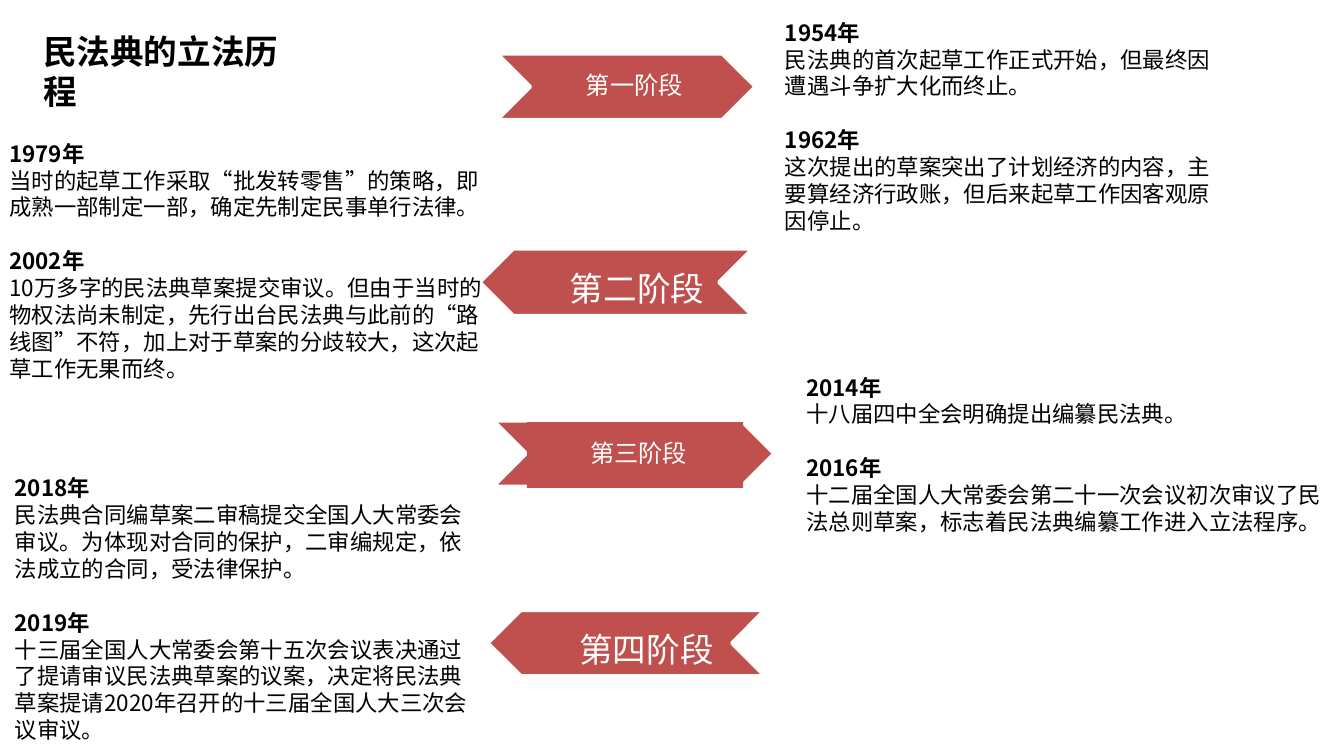
from pptx import Presentation
from pptx import util as u
from pptx.dml.color import RGBColor
from pptx.enum import shapes, text

RED = RGBColor(0xC0, 0x50, 0x4D)
WHITE = RGBColor(0xFF, 0xFF, 0xFF)
BLACK = RGBColor(0x00, 0x00, 0x00)
HEAD_FONT = "Calibri"
BODY_FONT = "Noto Sans CJK SC"

STAGES = [
    ("第一阶段", (3.7, 0.4, 1.92, 0.49), (0.28, 0, 1.43, 0.49), False, None),
    ("第二阶段", (3.57, 1.85, 2.03, 0.5), (0.6, 0.1, 1.77, 0.38), True, None),
    ("第三阶段", (3.67, 3.13, 2.09, 0.49), (0.25, 0.01, 1.61, 0.49), False, RED),
    ("第四阶段", (3.63, 4.54, 2.06, 0.49), (0.61, 0.1, 1.51, 0.38), True, None),
]

EVENTS = [
    ((0, 1, 3.75, 1.89), [
        ("1979年", "当时的起草工作采取“批发转零售”的策略，即成熟一部制定一部，确定先制定民事单行法律。"),
        ("2002年", "10万多字的民法典草案提交审议。但由于当时的物权法尚未制定，先行出台民法典与此前的“路线图”不符，"
                  "加上对于草案的分歧较大，这次起草工作无果而终。"),
    ]),
    ((5.77, 0.1, 3.42, 1.69), [
        ("1954年", "民法典的首次起草工作正式开始，但最终因遭遇斗争扩大化而终止。"),
        ("1962年", "这次提出的草案突出了计划经济的内容，主要算经济行政账，但后来起草工作因客观原因停止。"),
    ]),
    ((5.93, 2.74, 4.1, 1.29), [
        ("2014年", "十八届四中全会明确提出编纂民法典。"),
        ("2016年", "十二届全国人大常委会第二十一次会议初次审议了民法总则草案，标志着民法典编纂工作进入立法程序。"),
    ]),
    ((0.04, 3.49, 3.53, 2.1), [
        ("2018年", "民法典合同编草案二审稿提交全国人大常委会审议。为体现对合同的保护，二审编规定，依法成立的合同，受法律保护。"),
        ("2019年", "十三届全国人大常委会第十五次会议表决通过了提请审议民法典草案的议案，"
                  "决定将民法典草案提请2020年召开的十三届全国人大三次会议审议。"),
    ]),
]


def inches(box):
    return [u.Inches(value) for value in box]


def set_frame(frame, insets=(0.07, 0.04, 0.07, 0.04), anchor=text.MSO_ANCHOR.TOP):
    frame.word_wrap = True
    frame.auto_size = text.MSO_AUTO_SIZE.NONE
    frame.vertical_anchor = anchor
    (frame.margin_left, frame.margin_top,
     frame.margin_right, frame.margin_bottom) = inches(insets)


def add_span(para, words, font, size, color, bold=False):
    span = para.add_run()
    span.text = words
    span.font.name = font
    span.font.size = u.Pt(size)
    span.font.color.rgb = color
    span.font.bold = bold


def add_title(page, box):
    title = page.shapes.title
    title.left, title.top, title.width, title.height = inches(box)
    set_frame(title.text_frame)
    para = title.text_frame.paragraphs[0]
    para.alignment = text.PP_ALIGN.LEFT
    add_span(para, "民法典的立法历程", HEAD_FONT, 18, BLACK, True)


def add_stage(page, box, name, label_box, points_left, label_fill):
    arrow = page.shapes.add_shape(shapes.MSO_SHAPE.CHEVRON, *inches(box))
    arrow.shadow.inherit = False
    arrow.fill.solid()
    arrow.fill.fore_color.rgb = RED
    arrow.line.color.rgb = WHITE
    arrow.line.width = u.Pt(2)
    arrow.rotation = 180 if points_left else 0

    left, top, width, height = label_box
    label = page.shapes.add_textbox(*inches((box[0] + left, box[1] + top, width, height)))
    if label_fill is not None:
        label.fill.solid()
        label.fill.fore_color.rgb = label_fill
    para = label.text_frame.paragraphs[0]
    if points_left:
        set_frame(label.text_frame)
    else:
        set_frame(label.text_frame, (0.07, 0.02, 0.02, 0.02), text.MSO_ANCHOR.MIDDLE)
        para.alignment = text.PP_ALIGN.CENTER
        para.line_spacing = 0.9
    add_span(para, name, HEAD_FONT, 18 if points_left else 13, WHITE)


def add_events(page, box, events):
    frame = page.shapes.add_textbox(*inches(box)).text_frame
    set_frame(frame)
    for index, (year, story) in enumerate(events):
        para = frame.add_paragraph() if index else frame.paragraphs[0]
        if index:
            para.space_before = u.Pt(14.4)
        add_span(para, year, BODY_FONT, 12, BLACK, True)
        add_span(frame.add_paragraph(), story, BODY_FONT, 12, BLACK)


def main():
    deck = Presentation()
    deck.slide_width = u.Inches(10)
    deck.slide_height = deck.slide_width * 9 // 16
    page = deck.slides.add_slide(deck.slide_layouts[5])
    add_title(page, (0.25, 0.19, 1.96, 0.68))
    for name, box, label_box, points_left, label_fill in STAGES:
        add_stage(page, box, name, label_box, points_left, label_fill)
    for box, events in EVENTS:
        add_events(page, box, events)
    deck.save("out.pptx")


if __name__ == "__main__":
    main()
